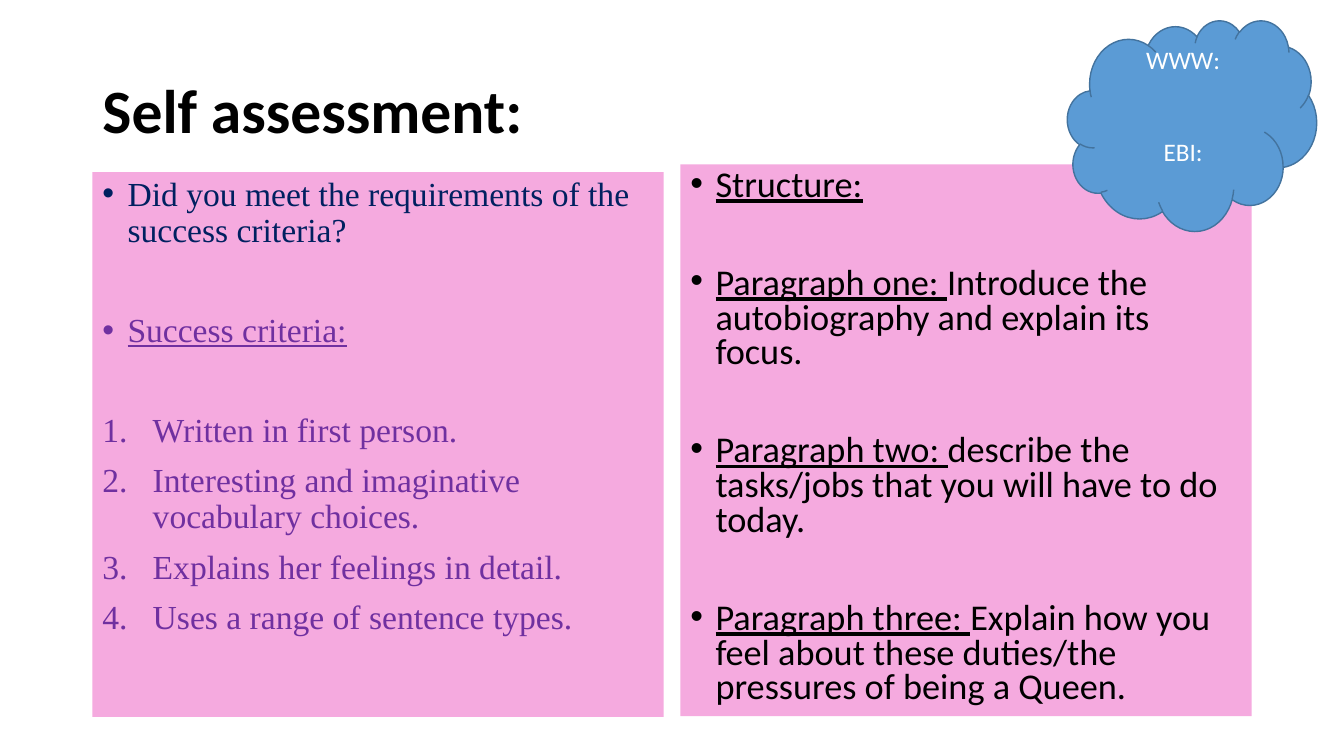
from lxml.etree import SubElement
from pptx import Presentation
from pptx.dml.color import RGBColor
from pptx.enum.shapes import MSO_SHAPE
from pptx.enum.text import MSO_ANCHOR, MSO_AUTO_SIZE, PP_ALIGN
from pptx.oxml.ns import qn
from pptx.util import Pt

COLOURS = {
    "black": "000000", "white": "FFFFFF", "pink": "F5AADF", "navy": "002060",
    "purple": "7030A0", "blue": "5B9BD5", "outline": "43739E",
}
BULLET = ("a:buChar", {"char": "•"}, 18)
NUMBER = ("a:buAutoNum", {"type": "arabicPeriod"}, 36)
GAP = 10


def colour(name):
    return RGBColor.from_string(COLOURS[name])


def set_format(target, values):
    for key, value in values.items():
        setattr(target, key, value)


def add_words(paragraph, words, ink, **font):
    run = paragraph.add_run()
    run.text = words
    set_format(run.font, font)
    run.font.color.rgb = colour(ink)


def add_marker(paragraph, marker):
    tag, attributes, indent = marker
    properties = paragraph._p.get_or_add_pPr()
    properties.set("marL", str(Pt(indent)))
    properties.set("indent", str(-Pt(indent)))
    SubElement(properties, qn("a:buFont"), typeface="Arial")
    SubElement(properties, qn(tag), attributes)


def add_heading(slide, box):
    heading = slide.shapes.title
    set_format(heading, dict(zip(("left", "top", "width", "height"), map(Pt, box))))
    frame = heading.text_frame
    set_format(frame, {"auto_size": MSO_AUTO_SIZE.NONE, "word_wrap": True,
                       "vertical_anchor": MSO_ANCHOR.MIDDLE})
    line = frame.paragraphs[0]
    set_format(line, {"alignment": PP_ALIGN.LEFT, "line_spacing": 0.9})
    add_words(line, "Self assessment:", "black", name="Calibri", size=Pt(44), bold=True)


def add_panel(slide, box, items, line_spacing, **font):
    """Each item holds a marker, the space before it, and its runs."""
    panel = slide.shapes.add_textbox(*map(Pt, box))
    panel.fill.solid()
    panel.fill.fore_color.rgb = colour("pink")
    frame = panel.text_frame
    set_format(frame, {"word_wrap": True, "auto_size": MSO_AUTO_SIZE.NONE})
    for index, (marker, space, runs) in enumerate(items):
        item = frame.add_paragraph() if index else frame.paragraphs[0]
        set_format(item, {"space_before": Pt(space), "line_spacing": line_spacing})
        add_marker(item, marker)
        for words, ink, underline in runs:
            add_words(item, words, ink, underline=underline, **font)


def add_criteria(slide, box):
    criteria = (
        "Written in first person.",
        "Interesting and imaginative vocabulary choices.",
        "Explains her feelings in detail.",
        "Uses a range of sentence types.",
    )
    section_gap = 45.5
    question = "Did you meet the requirements of the success criteria?"
    items = [
        (BULLET, 0, [(question, "navy", False)]),
        (BULLET, section_gap, [("Success criteria:", "purple", True)]),
    ]
    for index, criterion in enumerate(criteria):
        space = GAP if index else section_gap
        items.append((NUMBER, space, [(criterion, "purple", False)]))
    add_panel(slide, box, items, 0.9, name="Times New Roman", size=Pt(24))


def add_structure(slide, box):
    plan = {
        "Paragraph one: ": "Introduce the autobiography and explain its focus.",
        "Paragraph two: ": "describe the tasks/jobs that you will have to do today.",
        "Paragraph three: ":
            "Explain how you feel about these duties/the pressures of being a Queen.",
    }
    items = [(BULLET, 0, [("Structure:", "black", True)])]
    for label, task in plan.items():
        items.append((BULLET, 45, [(label, "black", True), (task, "black", False)]))
    add_panel(slide, box, items, 0.8, name="Calibri", size=Pt(25.9))


def add_feedback_cloud(slide, box):
    cloud = slide.shapes.add_shape(MSO_SHAPE.CLOUD, *map(Pt, box))
    cloud.shadow.inherit = False
    cloud.fill.solid()
    cloud.fill.fore_color.rgb = colour("blue")
    cloud.line.color.rgb = colour("outline")
    cloud.line.width = Pt(1)
    frame = cloud.text_frame
    # The deep bottom margin lifts both labels above the middle
    set_format(frame, {"word_wrap": True, "vertical_anchor": MSO_ANCHOR.MIDDLE,
                       "margin_bottom": Pt(25.6)})
    for index, label in enumerate(("WWW:", "EBI:")):
        line = frame.add_paragraph() if index else frame.paragraphs[0]
        set_format(line, {"alignment": PP_ALIGN.CENTER, "space_before": Pt(44 * index)})
        add_words(line, label, "white", name="Calibri", size=Pt(18))


def main():
    presentation = Presentation()
    set_format(presentation, {"slide_width": Pt(960), "slide_height": Pt(540)})
    slide = presentation.slides.add_slide(presentation.slide_layouts[5])

    # Heading, two columns and the feedback cloud over the right column
    add_heading(slide, (66, 28.8, 828, 104.4))
    add_criteria(slide, (66, 123, 408, 389))
    add_structure(slide, (486, 117.5, 408, 394))
    add_feedback_cloud(slide, (762.5, 14.4, 178, 150.5))
    presentation.save("out.pptx")


if __name__ == "__main__":
    main()
